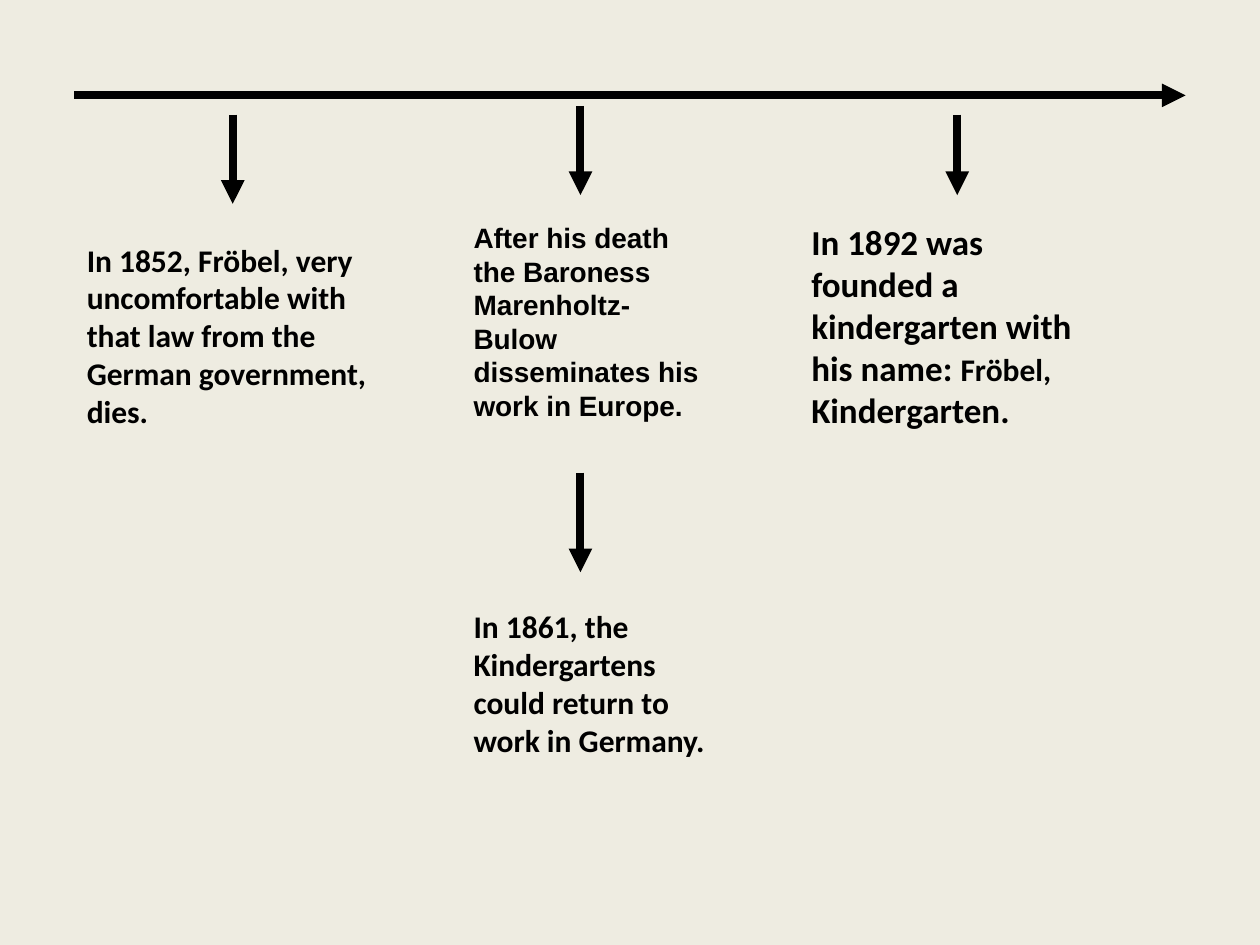
"""Build a timeline slide of the events around Fröbel's death and legacy."""
from lxml.etree import SubElement
from pptx import Presentation
from pptx.dml.color import RGBColor
from pptx.enum.shapes import MSO_CONNECTOR
from pptx.enum.text import MSO_AUTO_SIZE
from pptx.oxml.ns import qn
from pptx.util import Pt

BACKGROUND = RGBColor(0xEE, 0xEC, 0xE1)
BLACK = RGBColor(0x00, 0x00, 0x00)


def add_run(paragraph, text, *, size=18, font_name="Calibri"):
    run = paragraph.add_run()
    run.text = text
    run.font.size = Pt(size)
    run.font.name = font_name
    run.font.bold = True
    run.font.color.rgb = BLACK


presentation = Presentation()
presentation.slide_width = Pt(720)
presentation.slide_height = Pt(540)
slide = presentation.slides.add_slide(presentation.slide_layouts[6])
slide.background.fill.solid()
slide.background.fill.fore_color.rgb = BACKGROUND

arrows = [
    (42.5, 54.5, 677.5, 54.5),
    (133, 65.5, 133, 116.5),
    (331.7, 60.5, 331.7, 111.5),
    (331.7, 270, 331.7, 327),
    (547, 65.5, 547, 111.5),
]
for start_x, start_y, end_x, end_y in arrows:
    arrow = slide.shapes.add_connector(
        MSO_CONNECTOR.STRAIGHT, Pt(start_x), Pt(start_y), Pt(end_x), Pt(end_y)
    )
    arrow.line.color.rgb = BLACK
    arrow.line.width = Pt(4.5)
    SubElement(arrow.line._get_or_add_ln(), qn("a:tailEnd"), type="triangle")
    SubElement(arrow._element.spPr, qn("a:effectLst"))

arial = {"size": 16, "font_name": "Arial"}
events = [
    ((42.5, 134, 187, 115), [
        ("In 1852, Fröbel, very uncomfortable with that law from the "
         "German government, dies.", {}),
    ]),
    ((263.5, 122.5, 147.5, 122.5), [
        ("After his death the Baroness", arial),
        ("\n", {}),
        ("Marenholtz-Bulow", arial),
        ("\n", {}),
        ("disseminates his work in Europe.", arial),
    ]),
    ((263.5, 343.5, 147.5, 74), [
        ("In 1861, the Kindergartens could return to work in Germany.", {}),
    ]),
    ((456.5, 122.5, 186.5, 127.5), [
        ("In 1892 was founded a kindergarten with his name: ", {"size": 20}),
        ("Fröbel,", {}),
        (" Kindergarten.", {"size": 20}),
    ]),
]
for bounds, segments in events:
    text_box = slide.shapes.add_textbox(*[Pt(length) for length in bounds])
    text_frame = text_box.text_frame
    text_frame.word_wrap = True
    text_frame.auto_size = MSO_AUTO_SIZE.SHAPE_TO_FIT_TEXT
    paragraph = text_frame.paragraphs[0]
    for text, text_format in segments:
        if text == "\n":
            paragraph.add_line_break()
        else:
            add_run(paragraph, text, **text_format)

presentation.save("out.pptx")
